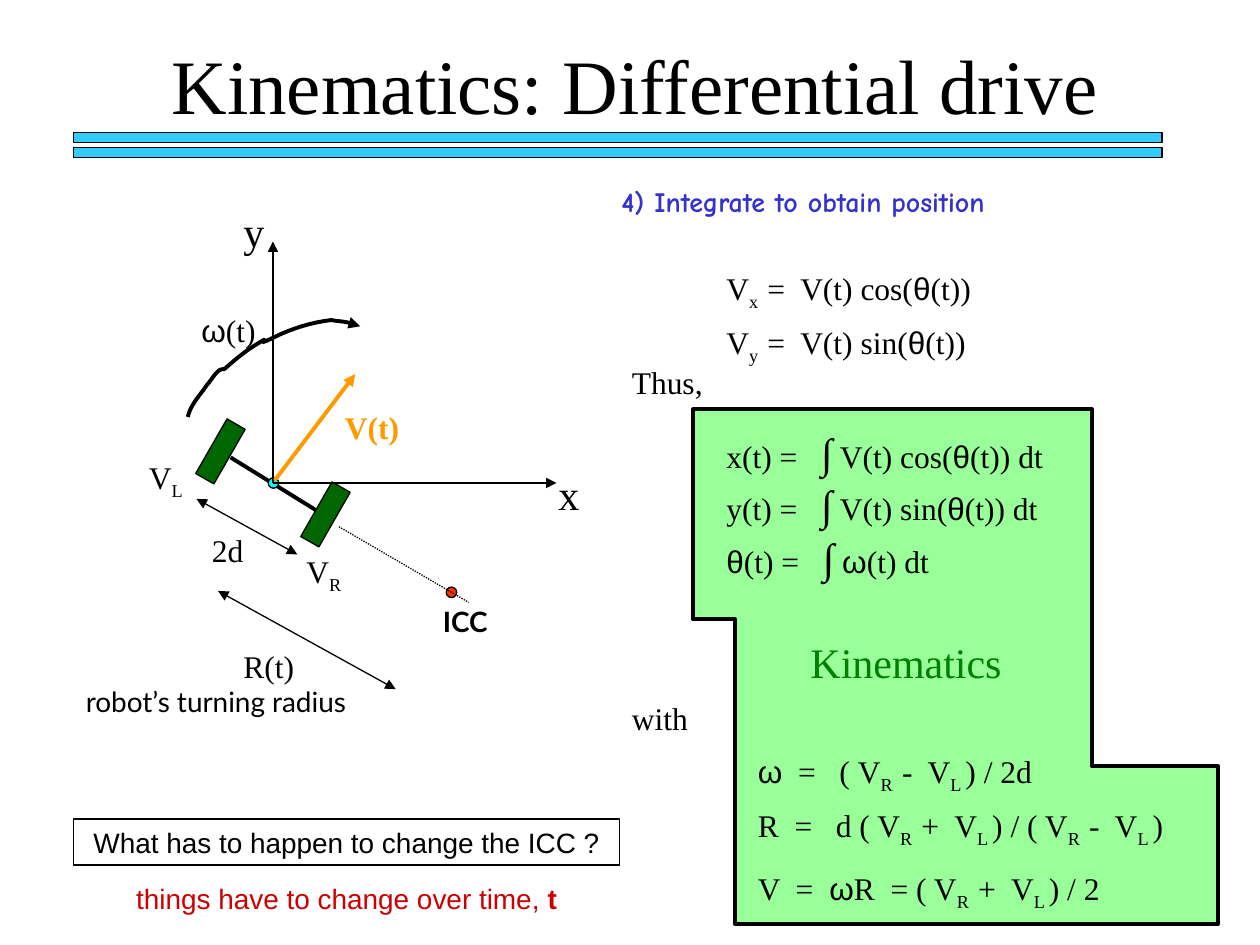
"""Build the slide on the kinematics of a differential drive."""
from itertools import groupby

from pptx import Presentation
from pptx.dml.color import RGBColor
from pptx.enum.dml import MSO_LINE
from pptx.enum.shapes import MSO_CONNECTOR, MSO_SHAPE
from pptx.enum.text import MSO_AUTO_SIZE, PP_ALIGN
from pptx.oxml.ns import qn
from pptx.util import Pt
from lxml import etree

RECT, OVAL = MSO_SHAPE.RECTANGLE, MSO_SHAPE.OVAL
LEFT, CENTER = PP_ALIGN.LEFT, PP_ALIGN.CENTER
GROW = MSO_AUTO_SIZE.SHAPE_TO_FIT_TEXT
STRAIGHT = MSO_CONNECTOR.STRAIGHT
DOTS = MSO_LINE.ROUND_DOT

BLACK = RGBColor(0, 0, 0)
MINT = RGBColor(0x99, 0xFF, 0x99)
GREEN = RGBColor(0, 0x80, 0)
FOREST = RGBColor(0, 0x66, 0)
SKY = RGBColor(0x33, 0xCC, 0xFF)
CYAN = RGBColor(0, 0xFF, 0xFF)
RED = RGBColor(0xFF, 0x33, 0)
CRIMSON = RGBColor(0xCC, 0, 0)
BLUE = RGBColor(0x33, 0x33, 0xCC)
ORANGE = RGBColor(0xFF, 0x99, 0)
SERIF, SANS, HAND, LATO = "Times New Roman", "Arial", "Comic Neue", "Lato"
THIN, THICK = 0.75, 2.25
TILT = 29.8

PANEL = [(624, 234), (396, 234), (396, 354), (420, 354),
         (420, 528), (696, 528), (696, 438), (624, 438)]
START = (107.3, 238.3)
CURVES = [
    [(109.4, 230.4), (113.8, 226.8), (118.1, 220.3)],
    [(120.2, 218.2), (122.4, 213.8), (125.3, 211.7)],
    [(126, 211), (127.4, 211), (128.2, 211)],
    [(133.2, 206.6), (139, 201.6), (144.7, 198)],
    [(159.8, 188.6), (141.8, 200.2), (156.2, 193)],
    [(166.3, 187.9), (177.8, 184.3), (189.4, 182.9)],
    [(192.2, 183.6), (195.8, 183.6), (198.7, 184.3)],
    [(201.6, 185), (203.8, 186.5), (205.9, 186.5)],
]
BARS = [(42, 75.6), (42, 84.2)]
WHEELS = [(120, 240), (180, 276)]
HUBS = [(255, 335.5, RED), (153.3, 273, CYAN)]
LINES = [
    ((193.7, 301), (267.8, 344.2), dict(dash=DOTS)),
    ((112.3, 285.1), (169.9, 316.8), dict(head=True, tail=True)),
    ((124.6, 337.7), (226.1, 393.8), dict(head=True, tail=True)),
    ((156, 276), (156, 138), dict(tail=True)),
    ((156, 276), (318, 276), dict(tail=True)),
    ((157, 274.5), (203, 213.8), dict(tail=True, color=ORANGE, width=THICK)),
]
TEXTS = [
    ("Kinematics", 456, 360, 126, dict(size=24, color=GREEN)),
    ("things have to change over time, ", 42, 500.4, 312,
     dict(size=16, font=SANS, color=CRIMSON, align=CENTER, strong="t")),
    ("4) Integrate to obtain position", 348, 102, 330,
     dict(size=16, font=HAND, color=BLUE, bold=True)),
    ("Kinematics: Differential drive", 66, 18, 594,
     dict(size=44, align=CENTER)),
    ("V~R", 168, 312, 54, {}),
    ("V~L", 78, 258, 54, {}),
    ("2d", 114, 300, 36, {}),
    ("ICC", 246, 342, 48, dict(size=16, font=LATO, bold=True)),
    ("R(t)", 132, 366, 54, {}),
    ("robot’s turning radius", 42, 387.6, 210, dict(size=16, font=LATO)),
    ("ω(t)", 108, 174, 50.4, {}),
    ("x", 312, 264, 54, dict(size=24)),
    ("y", 132, 114, 54, dict(size=24)),
    ("V(t)", 190, 229.7, 45.4, dict(color=ORANGE, bold=True, wrap=False)),
    ("What has to happen to change the ICC ?", 42, 468, 312,
     dict(size=16, font=SANS, align=CENTER, edge=1)),
    ("V~x  ~=  V(t) cos(θ(t))", 408, 150, 180, {}),
    ("V~y  ~=  V(t) sin(θ(t))", 408, 181.2, 180, {}),
    ("Thus,", 354, 204, 66, {}),
    ("with", 354, 396, 66, {}),
    ("ω  =   ( V~R  ~-  V~L ~) / 2d", 426, 426, 222, {}),
    ("R  =   d ( V~R  ~+  V~L ~) / ( V~R  ~-  V~L ~)", 426, 457.2, 282, {}),
    ("V  =  ωR  = ( V~R  ~+  V~L ~) / 2", 426, 493.2, 282, {}),
]
SUMS = ["x(t) =   ∫ V(t) cos(θ(t)) dt", "y(t) =   ∫ V(t) sin(θ(t)) dt",
        "θ(t) =   ∫ ω(t) dt"]


def kind(char):
    return "greek" if char in "ωθ" else "sum" if char == "∫" else "plain"


def text(words, x, y, w, size=18, font=SERIF, color=BLACK, bold=False,
         align=LEFT, wrap=True, strong="", edge=0):
    tall = max(size, 24 if "∫" in words else 0)
    box = shapes.add_textbox(Pt(x), Pt(y), Pt(w), Pt(tall * 1.2 + 7.2))
    if edge:
        box.line.color.rgb, box.line.width = BLACK, Pt(edge)
    frame = box.text_frame
    frame.word_wrap, frame.auto_size = wrap, GROW
    para = frame.paragraphs[0]
    para.alignment = align

    def put(part, heavy, form="plain", low=False):
        run = para.add_run()
        run.text = part
        run.font.name = SANS if form == "greek" else font
        run.font.size = Pt(24 if form == "sum" else size)
        run.font.bold = heavy
        run.font.color.rgb = color
        if low:
            run.font._element.set("baseline", "-25000")

    for i, part in enumerate(words.split("~")):
        for form, chars in groupby(part, kind):
            put("".join(chars), bold, form, i % 2 == 1)
    if strong:
        put(strong, True)


def tips(shape, head, tail):
    ln = shape._element.spPr.find(qn("a:ln"))
    for tag, shown in (("a:headEnd", head), ("a:tailEnd", tail)):
        if shown:
            etree.SubElement(ln, qn(tag)).set("type", "triangle")


def line(a, b, color=BLACK, width=THIN, dash=None, head=False, tail=False,
         ends=()):
    link = shapes.add_connector(STRAIGHT, *map(Pt, a + b))
    if ends:
        link.begin_connect(ends[0], 3)
        link.end_connect(ends[1], 1)
        link.begin_x, link.begin_y = map(Pt, a)
        link.end_x, link.end_y = map(Pt, b)
    link.line.color.rgb, link.line.width = color, Pt(width)
    if dash:
        link.line.dash_style = dash
    tips(link, head, tail)
    etree.SubElement(link._element.spPr, qn("a:effectLst"))


def paint(shape, fill=None, width=THIN):
    shape.shadow.inherit = False
    if fill is None:
        shape.fill.background()
    else:
        shape.fill.solid()
        shape.fill.fore_color.rgb = fill
    shape.line.color.rgb, shape.line.width = BLACK, Pt(width)
    return shape


def block(form, x, y, w, h, fill):
    return paint(shapes.add_shape(form, Pt(x), Pt(y), Pt(w), Pt(h)), fill)


def trace(dots, close, fill=None):
    dots = [(Pt(x), Pt(y)) for x, y in dots]
    pen = shapes.build_freeform(*dots[0])
    pen.add_line_segments(dots[1:], close=close)
    return paint(pen.convert_to_shape(), fill, THICK)


def bend(start, curves, steps=8):
    dots = [start]
    for b, c, d in curves:
        a = dots[-1]
        for t in (i / steps for i in range(1, steps + 1)):
            u = 1 - t
            dots.append(tuple(
                u**3 * p + 3 * u * u * t * q + 3 * u * t * t * r + t**3 * s
                for p, q, r, s in zip(a, b, c, d)))
    return dots


deck = Presentation()
deck.slide_width, deck.slide_height = Pt(720), Pt(540)
shapes = deck.slides.add_slide(deck.slide_layouts[6]).shapes

trace(PANEL, True, MINT)
for x, y in BARS:
    block(RECT, x, y, 622, 6, SKY)
wheels = [block(RECT, x, y, 12, 36, FOREST) for x, y in WHEELS]
for wheel in wheels:
    wheel.rotation = TILT
line((131.8, 261.4), (180.7, 291.6), width=THICK, ends=wheels)
for x, y, fill in HUBS:
    block(OVAL, x, y, 6, 6, fill)
tips(trace(bend(START, CURVES), False), False, True)
for a, b, form in LINES:
    line(a, b, **form)
for words, x, y, w, form in TEXTS:
    text(words, x, y, w, **form)
for i, words in enumerate(SUMS):
    text(words, 408, 240 + 30 * i, 216)

deck.save("out.pptx")
